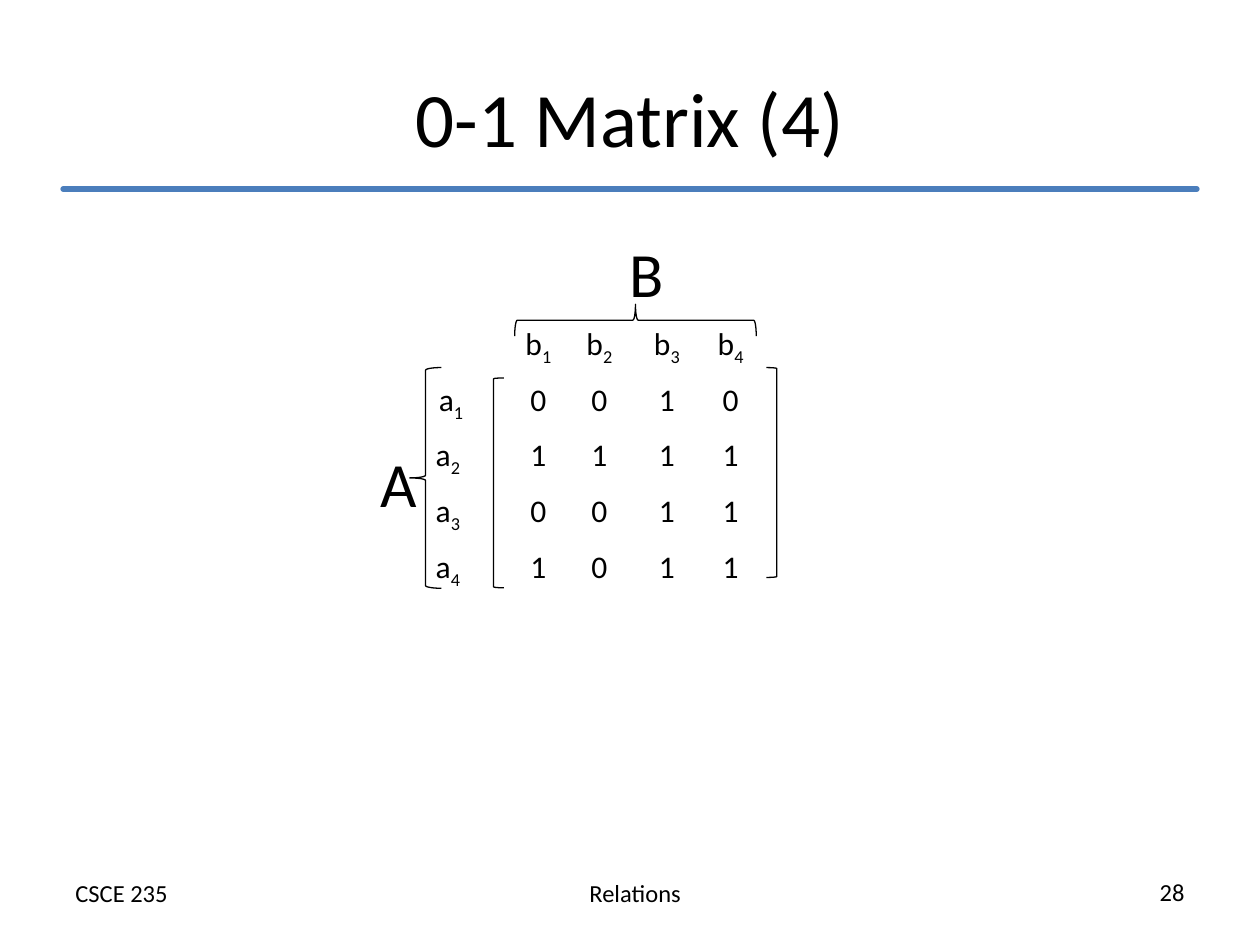
"""Build a slide that shows a relation between A and B as a 0-1 matrix."""
from lxml import etree
from pptx import Presentation
from pptx.dml.color import RGBColor
from pptx.enum import shapes, text
from pptx.oxml import parse_xml
from pptx.oxml.ns import nsdecls, qn
from pptx.util import Cm, Pt

BLACK = RGBColor(0x00, 0x00, 0x00)
WHITE = RGBColor(0xFF, 0xFF, 0xFF)
BLUE = RGBColor(0x4B, 0x7E, 0xBC)
FONT = "Calibri"
LEFT, CENTER, RIGHT = text.PP_ALIGN.LEFT, text.PP_ALIGN.CENTER, text.PP_ALIGN.RIGHT

COLUMN_WIDTHS = (1.12, 1.12, 0.58, 1.19, 1.27, 1.45, 1.12, 1.12)
ROW_HEIGHTS = (1.78,) + (1.12,) * 5
MATRIX = ("0010", "1111", "0011", "1011")
FIRST_ROW, FIRST_COLUMN = 2, 3


def add_span(para, words, size, baseline=0):
    """Append one formatted run to a paragraph."""
    span = para.add_run()
    span.text = words
    span.font.name = FONT
    span.font.size = Pt(size)
    span.font.bold = False
    span.font.color.rgb = BLACK
    if baseline:
        span.font._element.set("baseline", str(baseline * 1000))


def add_footer(page, words, left, top, align):
    """Add one footer text box."""
    box = page.shapes.add_textbox(Cm(left), Cm(top), Cm(7.41), Cm(0.86))
    box.text_frame.word_wrap = True
    para = box.text_frame.paragraphs[0]
    para.alignment = align
    add_span(para, words, 14)


def add_title(page, words):
    """Place and fill the title placeholder."""
    title = page.shapes.title
    title.left, title.top, title.width, title.height = Cm(1.27), Cm(0.76), Cm(22.86), Cm(3.18)
    title.text_frame.vertical_anchor = text.MSO_ANCHOR.MIDDLE
    para = title.text_frame.paragraphs[0]
    para.alignment = CENTER
    add_span(para, words, 44)


def add_rule(page):
    """Draw the round-capped rule under the title."""
    rule = page.shapes.add_connector(
        shapes.MSO_CONNECTOR.STRAIGHT, Cm(1.27), Cm(3.81), Cm(24.13), Cm(3.81))
    rule.line.color.rgb = BLUE
    rule.line.width = Pt(3)
    rule.line._get_or_add_ln().set("cap", "rnd")
    etree.SubElement(rule._element.spPr, qn("a:effectLst"))


def format_cell(cell):
    """Give a cell white borders, no fill and the body text size."""
    properties = cell._tc.get_or_add_tcPr()
    for side in ("lnL", "lnR", "lnT", "lnB"):
        properties.append(parse_xml(
            f'<a:{side} {nsdecls("a")} w="12700"><a:solidFill>'
            f'<a:srgbClr val="{WHITE}"/></a:solidFill></a:{side}>'))
    cell.fill.background()
    cell.text_frame.paragraphs[0].font.size = Pt(18)


def write_cell(cell, words, index="", size=18, align=CENTER):
    """Write a cell's text with an optional subscript index."""
    para = cell.text_frame.paragraphs[0]
    para.alignment = align
    add_span(para, words, size)
    if index:
        add_span(para, index, size, -25)


def add_matrix(page):
    """Add the labelled matrix as a table."""
    frame = page.shapes.add_table(
        len(ROW_HEIGHTS), len(COLUMN_WIDTHS), Cm(7.41), Cm(4.66),
        Cm(sum(COLUMN_WIDTHS)), Cm(sum(ROW_HEIGHTS)))
    table = frame.table
    table.first_row = table.horz_banding = False
    for column, width in zip(table.columns, COLUMN_WIDTHS):
        column.width = Cm(width)
    for row, height in zip(table.rows, ROW_HEIGHTS):
        row.height = Cm(height)
    for cell in table.iter_cells():
        format_cell(cell)
    table.cell(0, 2).merge(table.cell(0, 7))
    for column in (0, 2):
        table.cell(2, column).merge(table.cell(5, column))

    write_cell(table.cell(0, 2), "B", size=36)
    write_cell(table.cell(2, 0), "A", size=36, align=LEFT)
    table.cell(2, 0).vertical_anchor = text.MSO_ANCHOR.MIDDLE
    for i, values in enumerate(MATRIX):
        index = str(i + 1)
        write_cell(table.cell(1, FIRST_COLUMN + i), "b", index)
        write_cell(table.cell(FIRST_ROW + i, 1), "a", index, align=LEFT if i else CENTER)
        for j, value in enumerate(values):
            write_cell(table.cell(FIRST_ROW + i, FIRST_COLUMN + j), value)


def add_bracket(page, kind, left, top, width, height, rotation=0):
    """Draw one thin black brace or bracket."""
    bracket = page.shapes.add_shape(kind, Cm(left), Cm(top), Cm(width), Cm(height))
    bracket.rotation = rotation
    bracket.shadow.inherit = False
    bracket.fill.background()
    bracket.line.color.rgb = BLACK
    bracket.line.width = Pt(0.75)


def main():
    """Build and save the deck."""
    deck = Presentation()
    deck.slide_width, deck.slide_height = Cm(25.4), Cm(19.05)
    page = deck.slides.add_slide(deck.slide_layouts[5])
    add_footer(page, "Relations", 9.1, 17.58, CENTER)
    add_footer(page, "CSCE 235", 1.27, 17.58, LEFT)
    add_footer(page, "28", 16.72, 17.55, RIGHT)
    add_rule(page)
    add_title(page, "0-1 Matrix (4)")
    add_matrix(page)
    brace, bracket = shapes.MSO_SHAPE.LEFT_BRACE, shapes.MSO_SHAPE.LEFT_BRACKET
    add_bracket(page, brace, 12.49, 4.02, 0.64, 4.87, 90)
    add_bracket(page, brace, 8.26, 7.41, 0.64, 4.45)
    add_bracket(page, bracket, 9.95, 7.62, 0.21, 4.23)
    add_bracket(page, bracket, 15.45, 7.41, 0.21, 4.23, 180)
    deck.save("out.pptx")


if __name__ == "__main__":
    main()
